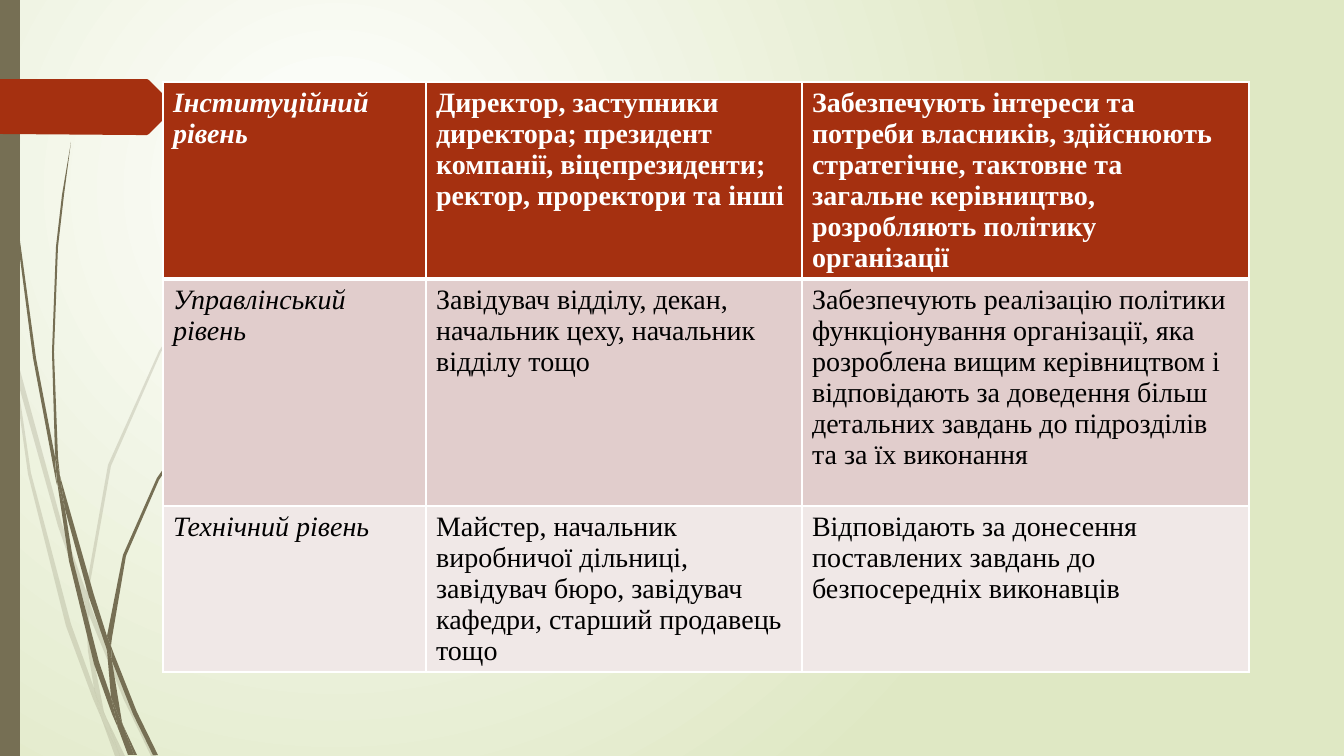
from pptx import Presentation
from pptx.dml.color import RGBColor
from pptx.enum.shapes import MSO_SHAPE
from pptx.oxml import parse_xml
from pptx.oxml.ns import qn
from pptx.util import Emu, Pt
from lxml.etree import SubElement

NS = 'xmlns:a="http://schemas.openxmlformats.org/drawingml/2006/main" xmlns:p="http://schemas.openxmlformats.org/presentationml/2006/main"'
OLIVE, RUST, WHITE, BLACK = "766F54", "A53010", "FFFFFF", "000000"


def px(n):
    return Emu(round(n * 12192000 / 1344))


def rgb(value):
    return RGBColor.from_string(value)


def write(tf, text, size=20, font="Times New Roman", color=BLACK, bold=False, italic=False):
    tf.word_wrap = True
    r = tf.paragraphs[0].add_run()
    r.text = text
    f = r.font
    f.size, f.name, f.bold, f.italic = Pt(size), font, bold, italic
    f.color.rgb = rgb(color)


class Deck:
    def __init__(self, width, height):
        self.prs = Presentation()
        self.prs.slide_width, self.prs.slide_height = px(width), px(height)
        self.s = self.prs.slides.add_slide(self.prs.slide_layouts[6])

    def background(self, inner, outer):
        stops = "".join(
            f'<a:gs pos="{pos}"><a:srgbClr val="{color}"/></a:gs>'
            for pos, color in ((0, inner), (100000, outer))
        )
        bg = parse_xml(
            f'<p:bg {NS}><p:bgPr><a:gradFill rotWithShape="1"><a:gsLst>{stops}</a:gsLst>'
            '<a:path path="circle"><a:fillToRect l="50000" t="50000" r="100000" b="100000"/></a:path>'
            "</a:gradFill><a:effectLst/></p:bgPr></p:bg>"
        )
        self.s.element.cSld.insert(0, bg)

    def paint(self, sp, color, alpha=100):
        sp.shadow.inherit = False
        sp.fill.solid()
        sp.fill.fore_color.rgb = rgb(color)
        sp.line.fill.background()
        if alpha < 100:
            clr = sp.element.spPr.find(qn("a:solidFill"))[0]
            SubElement(clr, qn("a:alpha")).set("val", str(alpha * 1000))

    def rect(self, x, y, w, h, color):
        sp = self.s.shapes.add_shape(MSO_SHAPE.RECTANGLE, px(x), px(y), px(w), px(h))
        self.paint(sp, color)

    def outline(self, points, color, alpha=100):
        start, *rest = [(px(x), px(y)) for x, y in points]
        fb = self.s.shapes.build_freeform(*start)
        fb.add_line_segments(rest, close=True)
        self.paint(fb.convert_to_shape(), color, alpha)

    def border(self, cell, side, width):
        ln = SubElement(cell._tc.get_or_add_tcPr(), qn(f"a:ln{side}"), w=str(Pt(width)))
        fill = SubElement(ln, qn("a:solidFill"))
        SubElement(fill, qn("a:srgbClr"), val=WHITE)

    def table(self, x, y, cols, rows, texts, fills):
        frame = self.s.shapes.add_table(
            len(rows), len(cols), px(x), px(y), px(sum(cols)), px(sum(rows))
        )
        tbl = frame.table
        tbl.horz_banding = False
        for col, width in zip(tbl.columns, cols):
            col.width = px(width)
        for i, height in enumerate(rows):
            tbl.rows[i].height = px(height)
            for j, text in enumerate(texts[i]):
                cell = tbl.cell(i, j)
                for side in "LRTB":
                    thick = (i, side) in ((0, "B"), (1, "T"))
                    self.border(cell, side, 3 if thick else 1)
                cell.fill.solid()
                cell.fill.fore_color.rgb = rgb(fills[i])
                write(cell.text_frame, text, color=BLACK if i else WHITE, bold=i == 0, italic=j == 0)


PALE_BLADES = [
    [(11, 353), (9, 325), (0, 284), (0, 301), (10, 347)],
    [(58, 526), (85, 604), (86, 591), (62, 524), (14, 348), (17, 379)],
    [(93, 612), (89, 601), (89, 615), (124, 700), (151, 756), (156, 756), (128, 698)],
    [(120, 756), (125, 756), (106, 717)],
    [(94, 688), (71, 624), (31, 473), (17, 379), (11, 353), (28, 474), (66, 626), (93, 699),
     (102, 720), (100, 713)],
    [(85, 604), (88, 651), (94, 688), (97, 698), (106, 717), (104, 712), (92, 651), (89, 615),
     (89, 613)],
    [(89, 589), (111, 466), (161, 352), (231, 247), (270, 200), (292, 176), (314, 155), (314, 154),
     (291, 176), (270, 199), (230, 246), (159, 351), (108, 465), (86, 589), (86, 591), (89, 601)],
    [(102, 720), (115, 756), (120, 756)],
    [(89, 613), (89, 615), (89, 601), (86, 591), (85, 604)],
    [(97, 698), (94, 688), (100, 713), (102, 720), (120, 756), (106, 717)],
]
DARK_BLADES = [
    [(7, 111), (17, 235), (33, 358), (56, 481), (57, 485), (55, 461), (55, 457), (36, 358),
     (19, 234), (8, 110), (5, 48), (4, 0), (3, 0), (4, 48)],
    [(89, 597), (107, 650), (107, 638), (107, 636), (94, 595), (60, 476), (65, 509)],
    [(114, 654), (111, 646), (112, 661), (133, 714), (153, 755), (158, 755), (137, 712)],
    [(111, 697), (99, 662), (73, 560), (65, 509), (57, 481), (69, 561), (94, 664), (112, 714),
     (118, 728), (117, 723)],
    [(60, 476), (58, 457), (54, 352), (58, 247), (64, 195), (71, 142), (62, 195), (56, 247),
     (52, 352), (55, 453)],
    [(134, 755), (137, 755), (123, 725)],
    [(57, 481), (65, 509), (60, 476), (55, 453), (55, 457)],
    [(112, 638), (126, 556), (159, 480), (207, 409), (233, 377), (247, 362), (263, 347), (262, 347),
     (247, 361), (233, 376), (206, 408), (157, 478), (123, 555), (107, 636), (111, 646)],
    [(118, 728), (128, 755), (132, 755)],
    [(107, 650), (111, 697), (117, 712), (123, 725), (122, 722), (112, 661), (110, 656)],
    [(107, 650), (110, 656), (112, 661), (111, 646), (107, 636)],
    [(117, 712), (111, 697), (117, 723), (118, 728), (131, 755), (134, 755), (123, 725)],
]
ARROW_TAG = [(174, 109), (149, 134), (147, 135), (137, 135), (0, 134), (0, 79), (137, 79),
             (147, 79), (149, 80), (174, 105), (175, 107)]
LEVELS = [
    ("Інституційний рівень",
     "Директор, заступники директора; президент компанії, віцепрезиденти; ректор, проректори та інші",
     "Забезпечують інтереси та потреби власників, здійснюють стратегічне, тактовне та загальне "
     "керівництво, розробляють політику організації"),
    ("Управлінський рівень",
     "Завідувач відділу, декан, начальник цеху, начальник відділу тощо",
     "Забезпечують реалізацію політики функціонування організації, яка розроблена вищим керівництвом "
     "і відповідають за доведення більш детальних завдань до підрозділів та за їх виконання"),
    ("Технічний рівень",
     "Майстер, начальник виробничої дільниці, завідувач бюро, завідувач кафедри, старший продавець тощо",
     "Відповідають за донесення поставлених завдань до безпосередніх виконавців"),
]


def main():
    deck = Deck(1344, 756)
    deck.background(WHITE, "DFE8C4")
    for blades, alpha in ((PALE_BLADES, 20), (DARK_BLADES, 100)):
        for blade in blades:
            deck.outline(blade, OLIVE, alpha)
    deck.rect(0, 0, 20, 756, OLIVE)
    deck.outline(ARROW_TAG, RUST)
    deck.table(163, 82, (263, 376, 447), (197, 227, 166), LEVELS, (RUST, "E1CDCC", "F0E8E7"))
    deck.prs.save("out.pptx")


if __name__ == "__main__":
    main()
